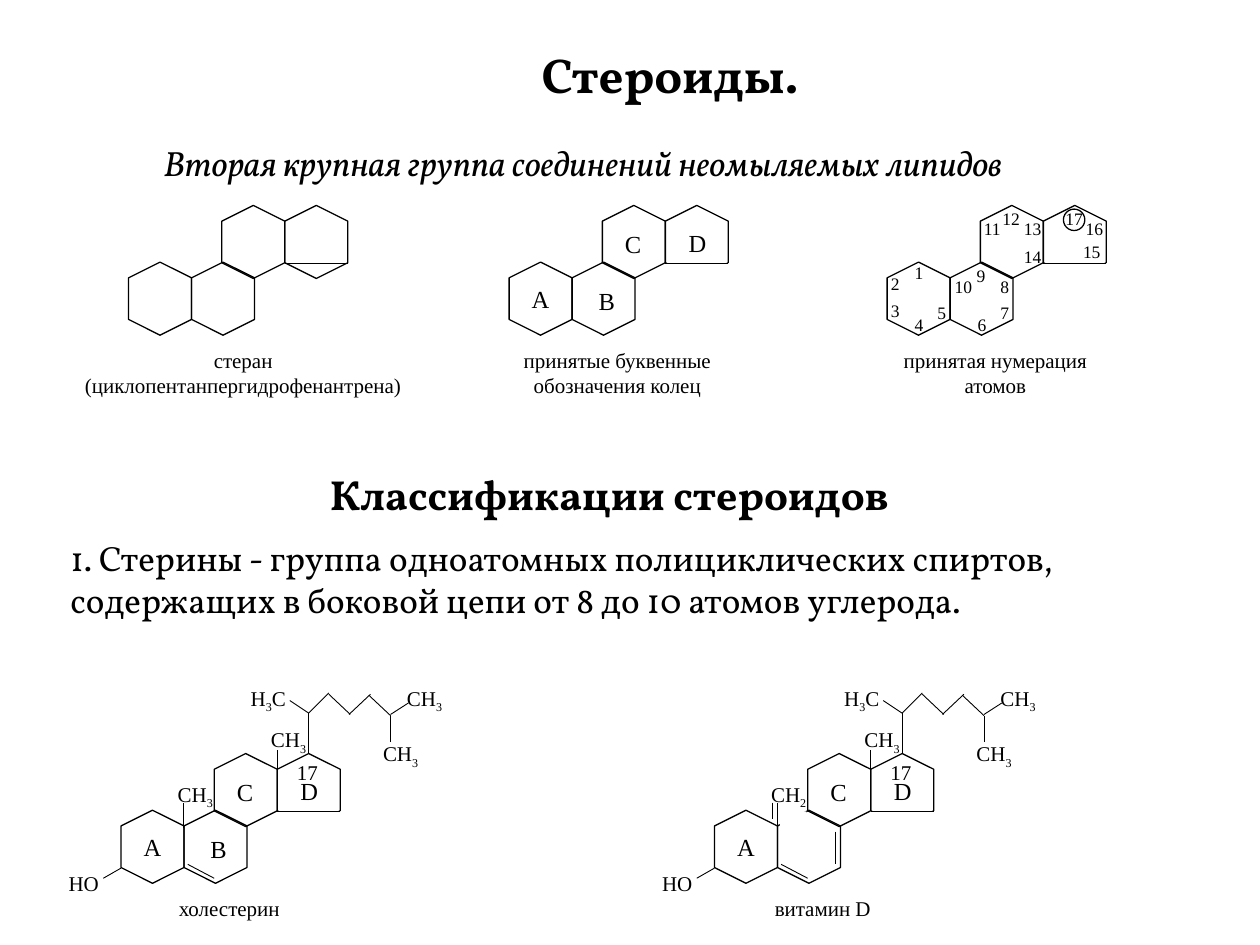
from dataclasses import dataclass
from itertools import groupby
from typing import NamedTuple

from lxml.etree import SubElement
from pptx import Presentation
from pptx.dml.color import RGBColor
from pptx.enum.shapes import MSO_CONNECTOR, MSO_SHAPE
from pptx.enum.text import MSO_AUTO_SIZE, PP_ALIGN
from pptx.oxml.ns import qn
from pptx.util import Cm, Pt

COLORS = {"ink": "000000", "paper": "FFFFFF"}
SERIF, BOOK = "Times New Roman", "Vollkorn"
GRID = 2.54  # cm in one layout unit


class Label(NamedTuple):
    text: str
    x: float
    y: float
    w: float = 0.36
    h: float = 0.27
    size: int = 12


class Bond(NamedTuple):
    x1: float
    y1: float
    x2: float
    y2: float


@dataclass
class Mole:
    x: float
    y: float
    labels: list[Label]
    bonds: tuple[Bond, ...] = ()
    masks: tuple[tuple[float, ...], ...] = ()
    dot: bool = False


def cm(*units: float) -> list[Cm]:
    return [Cm(round(unit * GRID, 3)) for unit in units]


def hue(name: str) -> RGBColor:
    return RGBColor.from_string(COLORS[name])


def style(font, **values) -> None:
    for key, value in values.items():
        setattr(font, key, value)
    font.color.rgb = hue("ink")


def add_box(pane, x: float, y: float, w: float, h: float, **values):
    frame = pane.add_textbox(*cm(x, y, w, h)).text_frame
    frame.word_wrap = True
    for key, value in values.items():
        setattr(frame, key, value)
    return frame


def add_label(pane, x: float, y: float, item: Label) -> None:
    pads = {f"margin_{side}": 0 for side in ("left", "top", "right", "bottom")}
    frame = add_box(pane, x + item.x, y + item.y, item.w, item.h, **pads)
    for i, line in enumerate(item.text.split("\n")):
        para = frame.add_paragraph() if i else frame.paragraphs[0]
        para.alignment = PP_ALIGN.CENTER
        for digit, chars in groupby(line, str.isdigit):
            run = para.add_run()
            run.text = "".join(chars)
            style(run.font, size=Pt(item.size), name=SERIF)
            if digit and not line.isdigit():
                run.font._element.set("baseline", "-25000")


def add_form(pane, kind, x: float, y: float, w: float, h: float,
             fill: bool = False, turn: int = 0) -> None:
    form = pane.add_shape(kind, *cm(x, y, w, h))
    form.shadow.inherit = False
    form.rotation = turn
    if fill:
        form.fill.solid()
        form.fill.fore_color.rgb = hue("paper")
        form.line.fill.background()
    else:
        form.fill.background()
        form.line.color.rgb = hue("ink")
        form.line.width = Pt(0.75)


def add_bond(pane, x: float, y: float, bond: Bond) -> None:
    ends = cm(x + bond.x1, y + bond.y1, x + bond.x2, y + bond.y2)
    line = pane.add_connector(MSO_CONNECTOR.STRAIGHT, *ends)
    line.line.color.rgb = hue("ink")
    line.line.width = Pt(0.5)
    SubElement(line._element.spPr, qn("a:effectLst"))


def add_mole(slide, mole: Mole) -> None:
    pane = slide.shapes.add_group_shape().shapes
    x, y = mole.x, mole.y
    for dx, dy in RINGS:
        add_form(pane, MSO_SHAPE.HEXAGON, x + dx, y + dy, 0.58, 0.5, turn=90)
    for dx, dy, w, h in mole.masks:
        add_form(pane, MSO_SHAPE.RECTANGLE, x + dx, y + dy, w, h, fill=True)
    for bond in (BASE, *mole.bonds):
        add_bond(pane, x, y, bond)
    for label in mole.labels:
        add_label(pane, x, y, label)
    if mole.dot:
        add_form(pane, MSO_SHAPE.FLOWCHART_CONNECTOR, x + 1.44, y - 0.01, 0.17, 0.17)


# Ring skeleton: offsets from the corner of each molecule
RINGS = [(0, 0.45), (0.5, 0.45), (0.74, 0), (1.24, 0)]
BASE = Bond(1.28, 0.42, 1.78, 0.42)
MASK = (1.28, 0.42, 0.55, 0.27)

# Ring letters and atom numbers
RING_A = Label("A", 0.04, 0.58, 0.5, 0.38, 14)
RING_B, RING_C, RING_D = [
    Label(text, x, y, 0.31, 0.21, 14)
    for text, x, y in [("B", 0.66, 0.6), ("C", 0.87, 0.15), ("D", 1.38, 0.14)]
]
SPOTS = [
    (0.23, 0.41), (0.04, 0.5), (0.04, 0.71), (0.23, 0.82), (0.41, 0.73), (0.73, 0.82),
    (0.91, 0.73), (0.91, 0.52), (0.72, 0.43), (0.54, 0.52), (0.77, 0.06), (0.92, -0.02),
    (1.09, 0.06), (1.09, 0.28), (1.56, 0.24), (1.58, 0.06), (1.42, -0.02),
]
ATOMS = [Label(str(n), x, y, 0.13 if n < 10 else 0.21, 0.17, 10)
         for n, (x, y) in enumerate(SPOTS, 1)]

# Side chain shared by both sterols
CHAIN = tuple(Bond(*ends) for ends in [
    (0.54, 0.55, 0.54, 0.35), (0.04, 0.87, -0.1, 0.95), (1.28, 0.13, 1.28, -0.07),
    (1.53, -0.04, 1.53, -0.36), (1.53, -0.36, 1.38, -0.46), (1.53, -0.36, 1.69, -0.52),
    (1.86, -0.35, 1.69, -0.51), (1.85, -0.35, 2.02, -0.51), (2.18, -0.34, 2.01, -0.5),
    (2.18, -0.35, 2.32, -0.44), (2.18, -0.13, 2.18, -0.34), (0.57, 0.84, 0.78, 0.95),
])
ENDS = [
    Label("HO", -0.41, 0.89, 0.31, 0.2), Label("CH3", 1.19, -0.25), Label("CH3", 2.08, -0.14),
    Label("CH3", 2.27, -0.58), Label("H3C", 1.03, -0.58), Label("17", 1.34, 0.01),
    RING_A, RING_C, RING_D,
]


def note(text: str, x: float = -0.04, w: float = 1.88, h: float = 0.46) -> Label:
    return Label(text, x, 1.09, w, h)


MOLES = [
    Mole(0.98, 1.67, [note("стеран\n(циклопентанпергидрофенантрена)", -0.34, 2.58)]),
    Mole(4, 1.67, [note("принятые буквенные обозначения колец"),
                   RING_A, RING_B, RING_C, RING_D], masks=(MASK,)),
    Mole(7, 1.67, [note("принятая нумерация атомов"), *ATOMS], masks=(MASK,), dot=True),
    Mole(0.92, 6.02, [note("холестерин", h=0.25), *ENDS, RING_B, Label("CH3", 0.45, 0.18)],
         CHAIN, (MASK,)),
    Mole(5.63, 6.02, [note("витамин D", h=0.25), *ENDS, Label("CH2", 0.45, 0.18)],
         (*CHAIN, Bond(1, 0.58, 1, 0.84), Bond(0.5, 0.35, 0.5, 0.48)),
         (MASK, (0.56, 0.42, 0.21, 0.19))),
]


def main() -> None:
    deck = Presentation()
    deck.slide_width, deck.slide_height = cm(10, 7.5)
    slide = deck.slides.add_slide(deck.slide_layouts[6])
    grow = {"auto_size": MSO_AUTO_SIZE.SHAPE_TO_FIT_TEXT}

    # Title and lead line
    frame = add_box(slide.shapes, 1.2, 0.3, 8.25, 1.21, **grow)
    title, lead = frame.paragraphs[0], frame.add_paragraph()
    title.text = "Стероиды."
    title._p.get_or_add_pPr().set("marL", str(Cm(7.62)))
    style(title.runs[0].font, size=Pt(28), name=BOOK, bold=True)
    lead.text = "Вторая крупная группа соединений неомыляемых липидов"
    lead.space_before = Pt(22)
    style(lead.runs[0].font, size=Pt(20), name=BOOK, italic=True)

    # Section heading and definition
    head = add_box(slide.shapes, 2.52, 3.67, 4.86, 0.5, word_wrap=False, **grow).paragraphs[0]
    head.text = "Классификации стероидов"
    style(head.runs[0].font, size=Pt(24), name=BOOK, bold=True)
    body = add_box(slide.shapes, 0.46, 4.21, 8.94, 0.77, **grow).paragraphs[0]
    body.text = ("1. Стерины - группа одноатомных полициклических спиртов, "
                 "содержащих в боковой цепи от 8 до 10 атомов углерода.")
    style(body.runs[0].font, size=Pt(20), name=BOOK)

    # Molecules
    for mole in MOLES:
        add_mole(slide, mole)
    deck.save("out.pptx")


if __name__ == "__main__":
    main()
